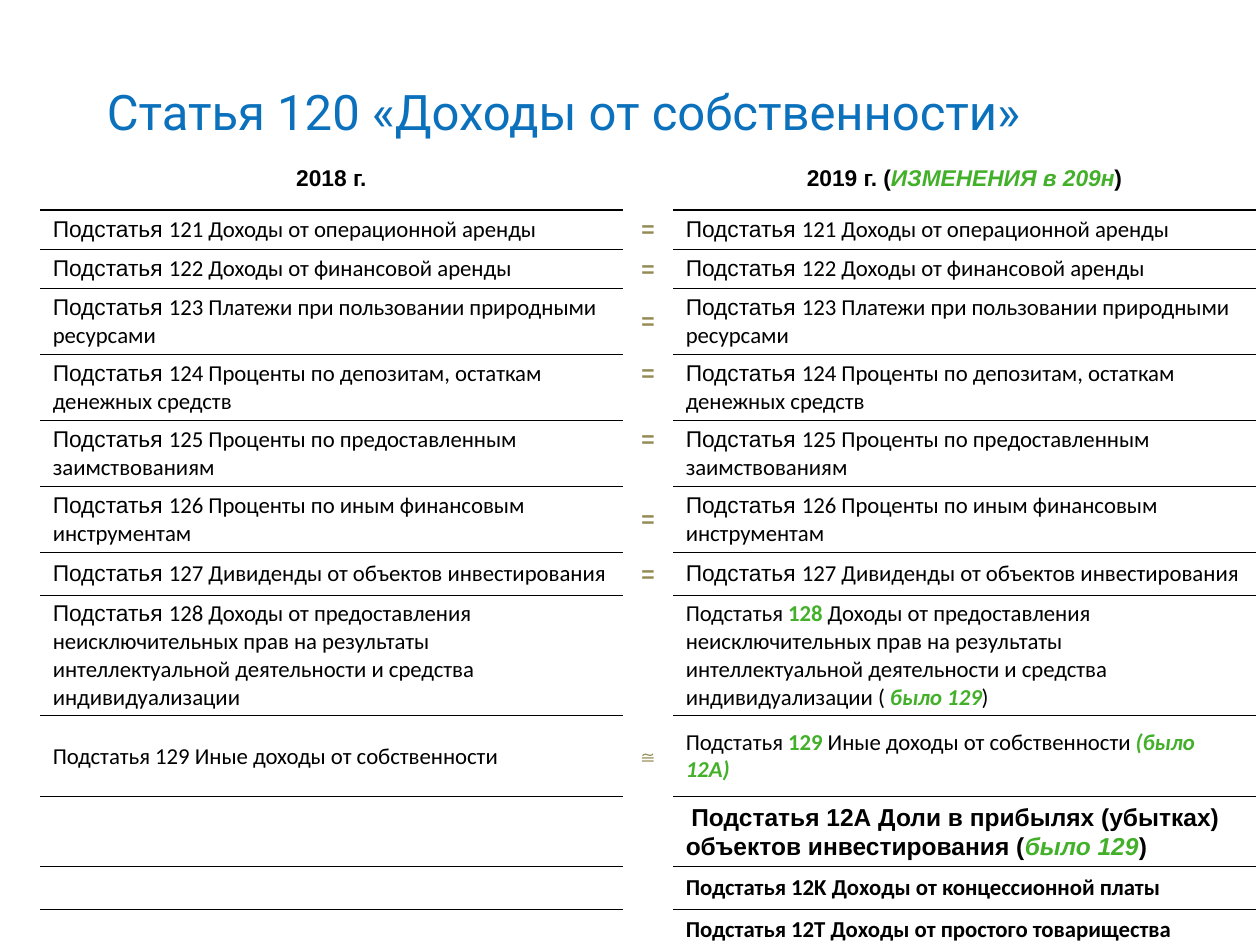
import pptx
import pptx.dml.color
import pptx.enum.text
import pptx.oxml
import pptx.oxml.ns
import pptx.util
from pptx.util import Cm

BLUE = pptx.dml.color.RGBColor(0x0B, 0x71, 0xBD)
GREEN = pptx.dml.color.RGBColor(0x43, 0xB0, 0x2A)
KHAKI = pptx.dml.color.RGBColor(0x94, 0x8A, 0x54)
BLACK = pptx.dml.color.RGBColor(0, 0, 0)
WHITE = pptx.dml.color.RGBColor(0xFF, 0xFF, 0xFF)
NAMESPACE = pptx.oxml.ns.nsdecls("a")
PLAIN_TABLE_STYLE = "{2D5ABB26-0587-4C30-8999-92F81FD0307C}"
MIDDLE = pptx.enum.text.MSO_ANCHOR.MIDDLE
TOP = pptx.enum.text.MSO_ANCHOR.TOP
CENTER = pptx.enum.text.PP_ALIGN.CENTER
LEFT = pptx.enum.text.PP_ALIGN.LEFT


def write_runs(cell, runs):
    paragraph = cell.text_frame.paragraphs[0]
    for text, font_name, size, color, bold, italic in runs:
        run = paragraph.add_run()
        run.text = text
        run.font.name = font_name
        run.font.size = pptx.util.Pt(size)
        run.font.color.rgb = color
        run.font.bold = bold
        run.font.italic = italic
    if not runs:
        paragraph._p.append(pptx.oxml.parse_xml(f'<a:endParaRPr {NAMESPACE} lang="ru-RU" sz="1300"/>'))


def set_borders(cell, top, bottom):
    properties = cell._tc.get_or_add_tcPr()
    borders = [("lnT", top), ("lnB", bottom)]
    for position, (tag, border) in enumerate(item for item in borders if item[1]):
        color, width = border
        properties.insert(position, pptx.oxml.parse_xml(
            f'<a:{tag} {NAMESPACE} w="{pptx.util.Pt(width)}"><a:solidFill>'
            f'<a:srgbClr val="{color}"/></a:solidFill></a:{tag}>'))


presentation = pptx.Presentation()
presentation.slide_width = Cm(25.4)
presentation.slide_height = Cm(19.05)
slide = presentation.slides.add_slide(presentation.slide_layouts[5])

title = slide.shapes.title
title.left, title.top, title.width, title.height = Cm(1.9), Cm(1.52), Cm(24), Cm(1.45)
title.text_frame.text = "Статья 120 «Доходы от собственности»"
title.text_frame.vertical_anchor = MIDDLE
title_paragraph = title.text_frame.paragraphs[0]
title_paragraph.alignment = LEFT
title_font = title_paragraph.runs[0].font
title_font.name = "Roboto"
title_font.size = pptx.util.Pt(28)
title_font.color.rgb = BLUE

prefix = ("Подстатья ", "Arial", 13, BLACK, False, False)
calibri_prefix = ("Подстатья ", "Calibri", 13, BLACK, False, False)
equal = [("=", "Arial", 13, KHAKI, True, False)]
rights = ("Доходы от предоставления неисключительных прав на результаты "
          "интеллектуальной деятельности и средства индивидуализации")
unchanged_items = [
    "121 Доходы от операционной аренды",
    "122 Доходы от финансовой аренды",
    "123 Платежи при пользовании природными ресурсами",
    "124 Проценты по депозитам, остаткам денежных средств",
    "125 Проценты по предоставленным заимствованиям",
    "126 Проценты по иным финансовым инструментам",
    "127 Дивиденды от объектов инвестирования",
]

rows = [(
    [("2018 г.", "Arial", 13, BLACK, True, False)],
    [],
    [("2019 г. (", "Arial", 13, BLACK, True, False),
     ("ИЗМЕНЕНИЯ в 209н", "Arial", 13, GREEN, True, True),
     (")", "Arial", 13, BLACK, True, False)],
)]
for item in unchanged_items:
    item_runs = [prefix, (item, "Calibri", 13, BLACK, False, False)]
    rows.append((item_runs, equal, item_runs))
rows += [
    ([prefix, ("128 " + rights, "Calibri", 13, BLACK, False, False)],
     [],
     [calibri_prefix,
      ("128", "Calibri", 13, GREEN, True, False),
      (f" {rights} ( ", "Calibri", 13, BLACK, False, False),
      ("было 129", "Calibri", 13, GREEN, True, True),
      (")", "Calibri", 13, BLACK, False, False)]),
    ([("Подстатья 129 Иные доходы от собственности", "Calibri", 13, BLACK, False, False)],
     [("≅", "Arial", 14, KHAKI, False, False)],
     [calibri_prefix,
      ("129 ", "Calibri", 13, GREEN, True, False),
      ("Иные доходы от собственности ", "Calibri", 13, BLACK, False, False),
      ("(было 12А)", "Calibri", 13, GREEN, True, True)]),
    ([], [],
     [(" ", "Calibri", 14, KHAKI, False, False),
      ("Подстатья 12А Доли в прибылях (убытках) объектов инвестирования (",
       "Arial", 14, BLACK, True, False),
      ("было 129", "Arial", 14, GREEN, True, True),
      (")", "Arial", 14, BLACK, True, False)]),
    ([], [], [("Подстатья 12K Доходы от концессионной платы", "Calibri", 13, BLACK, True, False)]),
    ([], [], [("Подстатья 12T Доходы от простого товарищества", "Calibri", 13, BLACK, True, False)]),
    ([], [], []),
]

row_heights = [1.29, 0.79, 0.79] + [1.33] * 4 + [0.87, 2.42, 1.63, 1.41, 0.87, 1.25, 0.84]
column_widths = [11.74, 1.02, 11.74]
top_anchored = [(4, 1), (5, 1), (12, 2)]
last_row = len(rows) - 1

graphic_frame = slide.shapes.add_table(
    len(rows), 3, Cm(0.81), Cm(2.95), Cm(sum(column_widths)), Cm(sum(row_heights)))
table = graphic_frame.table
table.first_row = False
table.horz_banding = False
table._tbl.tblPr.find(pptx.oxml.ns.qn("a:tableStyleId")).text = PLAIN_TABLE_STYLE
for column, width in zip(table.columns, column_widths):
    column.width = Cm(width)

for row_index, row_cells in enumerate(rows):
    table.rows[row_index].height = Cm(row_heights[row_index])
    for column_index, runs in enumerate(row_cells):
        cell = table.cell(row_index, column_index)
        is_middle_column = column_index == 1
        is_top_anchored = (row_index, column_index) in top_anchored
        color = WHITE if is_middle_column else BLACK
        heading_width = 0.5 if is_middle_column else 1.5
        top = (color, heading_width if row_index == 1 else 0.5) if row_index > 0 else None
        bottom = (color, heading_width if row_index == 0 else 0.5) if row_index < last_row else None
        set_borders(cell, top, bottom)
        cell.fill.background()
        cell.vertical_anchor = TOP if is_top_anchored else MIDDLE
        cell.margin_top = cell.margin_bottom = Cm(0.13 if is_top_anchored else 0.08)
        is_centered = is_middle_column or row_index == 0
        cell.text_frame.paragraphs[0].alignment = CENTER if is_centered else LEFT
        write_runs(cell, runs)

presentation.save("out.pptx")
